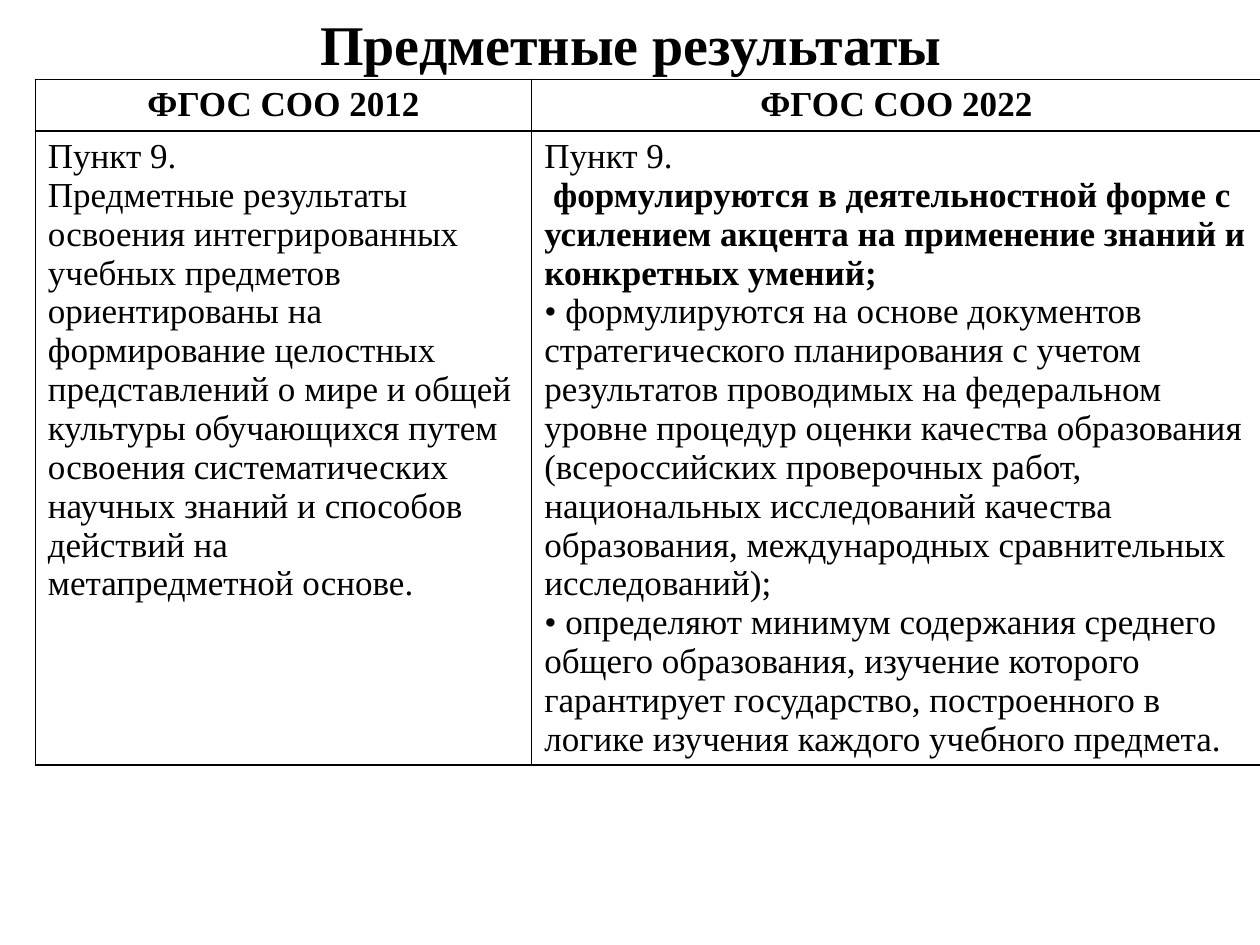
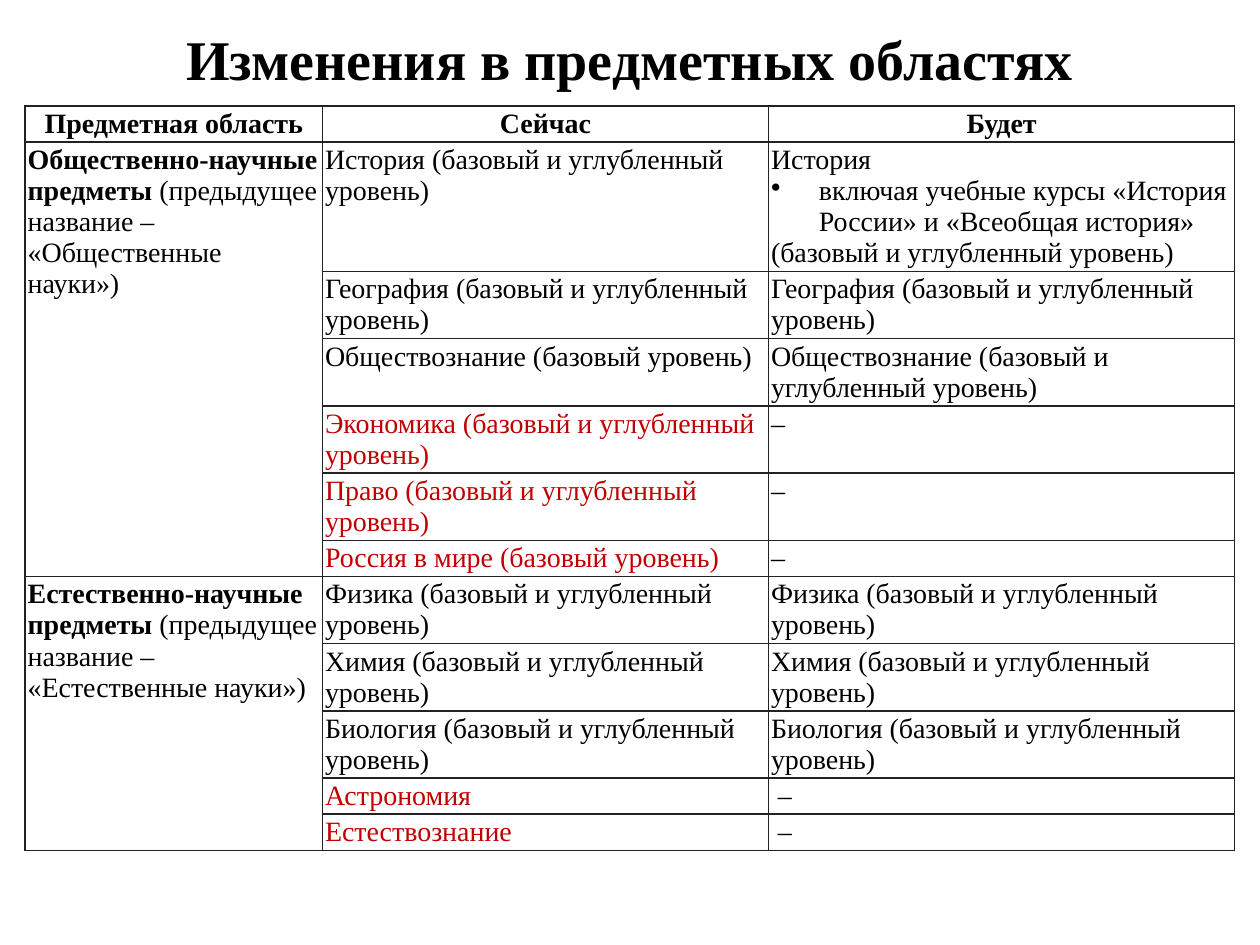
import pptx
import pptx.dml.color
import pptx.enum.text
import pptx.oxml
import pptx.oxml.ns
import pptx.util
from pptx.util import Inches

COLORS = {"text": "000000", "removed": "C00000", "cell": "FFFFFF",
          "results_border": "000000", "areas_border": "222222"}
FONT = "Times New Roman"
TITLE_SIZE = 32
CENTER = pptx.enum.text.PP_ALIGN.CENTER
BULLET = "• "

# In the texts below, ** switches bold on and off.
# A cell is a list of paragraphs; "\n" is a line break inside a paragraph.
RESULTS_TITLE = "Предметные результаты"
RESULTS_HEADER = ["ФГОС СОО 2012", "ФГОС СОО 2022"]
RESULTS_2012 = [
    "Пункт 9.",
    "Предметные результаты освоения интегрированных учебных предметов ориентированы на "
    "формирование целостных\nпредставлений о мире и общей культуры обучающихся путем\n"
    "освоения систематических научных знаний и способов действий на\n"
    "метапредметной основе.",
]
RESULTS_2022 = [
    "Пункт 9.",
    " **формулируются в деятельностной форме с усилением акцента на применение знаний "
    "и конкретных умений;\n**"
    "• формулируются на основе документов стратегического планирования с учетом "
    "результатов проводимых на федеральном\nуровне процедур оценки качества образования "
    "(всероссийских проверочных работ, национальных исследований качества\n"
    "образования, международных сравнительных исследований);\n"
    "• определяют минимум содержания среднего общего образования, изучение которого "
    "гарантирует государство, построенного в логике изучения каждого учебного предмета.",
]

AREAS_TITLE = "Изменения в предметных областях"
AREAS_HEADER = ["Предметная область", "Сейчас", "Будет"]
BASIC = "(базовый уровень)"
BOTH = "(базовый и углубленный уровень)"
HISTORY_PLANNED = ["История",
                   BULLET + "включая учебные курсы «История России» и «Всеобщая история»",
                   BOTH]
# Area, then its subjects: now, planned (None when removed), number of text lines
AREAS = [
    ("**Общественно-научные предметы **(предыдущее название – «Общественные науки»)", [
        (f"История {BOTH}", HISTORY_PLANNED, 4),
        (f"География {BOTH}", [f"География {BOTH}"], 2),
        (f"Обществознание {BASIC}", [f"Обществознание {BOTH}"], 2),
        (f"Экономика {BOTH}", None, 2),
        (f"Право {BOTH}", None, 2),
        (f"Россия в мире {BASIC}", None, 1),
    ]),
    ("**Естественно-научные предметы **(предыдущее название – «Естественные науки»)", [
        (f"Физика {BOTH}", [f"Физика {BOTH}"], 2),
        (f"Химия {BOTH}", [f"Химия {BOTH}"], 2),
        (f"Биология {BOTH}", [f"Биология {BOTH}"], 2),
        ("Астрономия", None, 1),
        ("Естествознание", None, 1),
    ]),
]


def rgb(name):
    return pptx.dml.color.RGBColor.from_string(COLORS[name])


def style_font(font, size, bold, color="text"):
    font.name, font.size, font.bold = FONT, pptx.util.Pt(size), bold
    font.color.rgb = rgb(color)


def add_page(deck, title, left, width, height):
    page = deck.slides.add_slide(deck.slide_layouts[5])
    box = page.shapes.title
    box.left, box.top, box.width, box.height = Inches(left), 0, Inches(width), Inches(height)
    box.text_frame.text = title
    box.text_frame.vertical_anchor = pptx.enum.text.MSO_ANCHOR.MIDDLE
    para = box.text_frame.paragraphs[0]
    para.alignment = CENTER
    style_font(para.runs[0].font, TITLE_SIZE, True)
    return page


def hang_bullet(para):
    properties = para._p.get_or_add_pPr()
    properties.set("marL", str(Inches(0.38)))
    properties.set("indent", str(-Inches(0.38)))
    properties.append(pptx.oxml.parse_xml(
        f'<a:buChar {pptx.oxml.ns.nsdecls("a")} char="{BULLET.strip()}"/>'))


def add_spans(para, text, size, color):
    """Write text with ** marks as bold and regular runs."""
    for index, part in enumerate(text.split("**")):
        for line_number, line in enumerate(part.split("\n")):
            if line_number:
                para.add_line_break()
            if line:
                span = para.add_run()
                span.text = line
                style_font(span.font, size, index % 2 == 1, color)


def fill_cell(cell, paragraphs, size, color="text", alignment=None):
    for number, text in enumerate(paragraphs):
        frame = cell.text_frame
        para = frame.add_paragraph() if number else frame.paragraphs[0]
        para.alignment = alignment
        if text.startswith(BULLET):
            hang_bullet(para)
            text = text.removeprefix(BULLET)
        add_spans(para, text, size, color)


def add_grid(page, left, top, widths, heights, border, margin=None):
    """Add an empty white table with a 1 pt grid."""
    table = page.shapes.add_table(
        len(heights), len(widths), Inches(left), Inches(top),
        Inches(sum(widths)), Inches(sum(heights))).table
    table.first_row = table.horz_banding = False
    for column, width in zip(table.columns, widths):
        column.width = Inches(width)
    for row, height in zip(table.rows, heights):
        row.height = Inches(height)
    for cell in table.iter_cells():
        if margin is not None:
            cell.margin_left = cell.margin_right = Inches(margin)
            cell.margin_top = cell.margin_bottom = Inches(margin)
        properties = cell._tc.get_or_add_tcPr()
        for side in "LRTB":
            properties.append(pptx.oxml.parse_xml(
                f'<a:ln{side} {pptx.oxml.ns.nsdecls("a")} w="{pptx.util.Pt(1)}"><a:solidFill>'
                f'<a:srgbClr val="{COLORS[border]}"/></a:solidFill></a:ln{side}>'))
        cell.fill.solid()
        cell.fill.fore_color.rgb = rgb("cell")
    return table


def fill_header(table, labels, size):
    for column, label in enumerate(labels):
        fill_cell(table.cell(0, column), [f"**{label}**"], size, alignment=CENTER)


def build_results(deck):
    size = 20
    page = add_page(deck, RESULTS_TITLE, 0.51, 9, 0.68)
    table = add_grid(page, 0.28, 0.63, [3.94, 5.79], [0.41, 5.03], "results_border")
    fill_header(table, RESULTS_HEADER, size)
    for column, paragraphs in enumerate([RESULTS_2012, RESULTS_2022]):
        fill_cell(table.cell(1, column), paragraphs, size)


def build_areas(deck):
    size, margin, line_height = 16, 0.02, 0.24
    page = add_page(deck, AREAS_TITLE, 0, 10, 0.92)
    line_counts = [1] + [lines for _, subjects in AREAS for _, _, lines in subjects]
    heights = [2 * margin + line_height * lines for lines in line_counts]
    table = add_grid(page, 0.2, 0.84, [2.36, 3.54, 3.7], heights, "areas_border", margin)
    fill_header(table, AREAS_HEADER, size)
    row = 1
    for area, subjects in AREAS:
        table.cell(row, 0).merge(table.cell(row + len(subjects) - 1, 0))
        fill_cell(table.cell(row, 0), [area], size)
        for now, planned, _ in subjects:
            dash = "–" if "(" in now else " –"
            fill_cell(table.cell(row, 1), [now], size, "text" if planned else "removed")
            fill_cell(table.cell(row, 2), planned or [dash], size)
            row += 1


def main():
    deck = pptx.Presentation()
    deck.slide_width, deck.slide_height = Inches(10), Inches(7.5)
    build_results(deck)
    build_areas(deck)
    deck.save("out.pptx")


if __name__ == "__main__":
    main()
